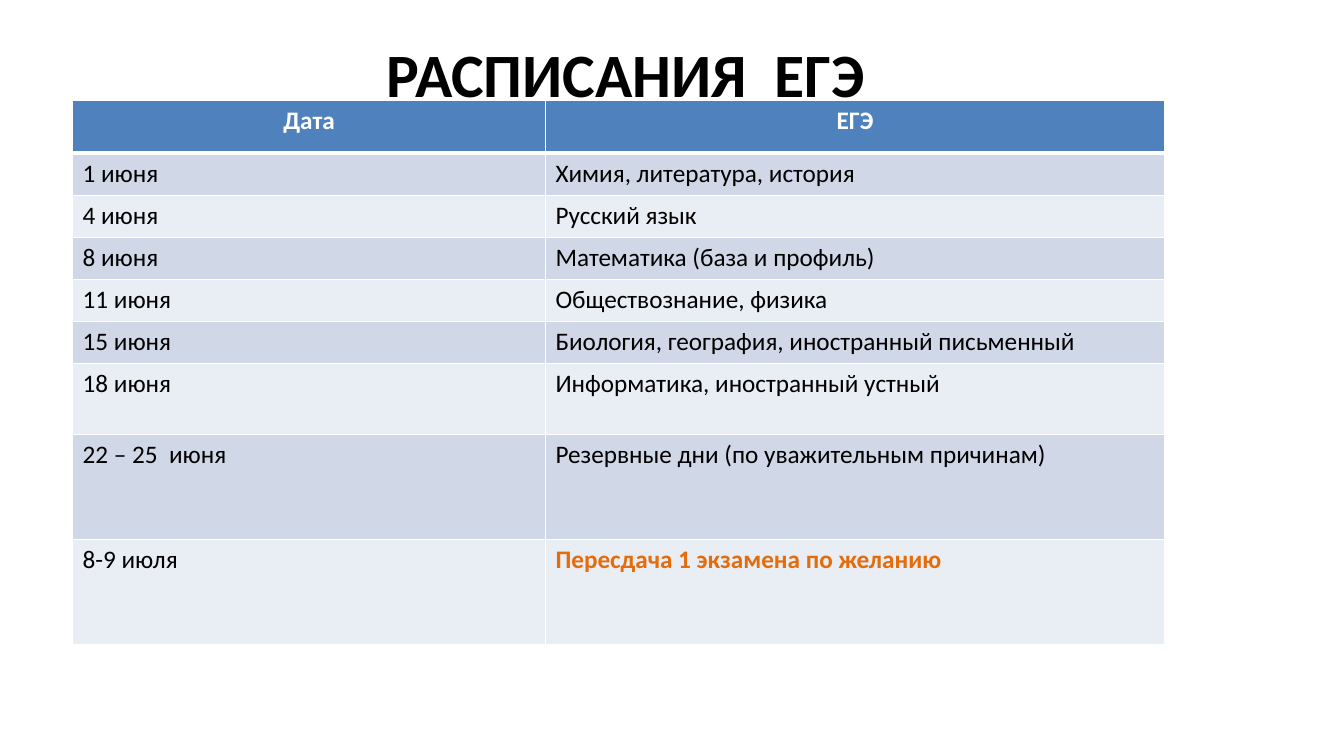
from typing import NamedTuple

from lxml import etree
from pptx import Presentation
from pptx.dml.color import RGBColor
from pptx.enum.text import MSO_ANCHOR, PP_ALIGN
from pptx.oxml.ns import qn
from pptx.util import Inches, Pt

CENTER, LEFT = PP_ALIGN.CENTER, PP_ALIGN.LEFT
MIDDLE = MSO_ANCHOR.MIDDLE
FONT = "Calibri"
BLACK, WHITE, ORANGE = "000000", "FFFFFF", "E46C0A"
HEADER_FILL = "4F81BD"
BAND_FILLS = ("D0D8E8", "E9EDF4")

SLIDE_WIDTH, SLIDE_HEIGHT = 13.33, 7.5
TITLE_BOX = (1.62, 0.25, 9.17, 0.94)
TABLE_LEFT, TABLE_TOP = 0.72, 1.0
COLUMN_WIDTHS = (4.69, 6.14)
HEADER_HEIGHT = 0.52
ROW_HEIGHT = 0.417


class Exam(NamedTuple):
    date: str
    subjects: str
    height: float = ROW_HEIGHT
    highlighted: bool = False


EXAMS = (
    Exam("1 июня", "Химия, литература, история"),
    Exam("4 июня", "Русский язык"),
    Exam("8 июня", "Математика (база и профиль)"),
    Exam("11 июня", "Обществознание, физика"),
    Exam("15 июня", "Биология, география, иностранный письменный"),
    Exam("18 июня", "Информатика, иностранный устный", 0.71),
    Exam("22 – 25  июня", "Резервные дни (по уважительным причинам)", 1.04),
    Exam("8-9 июля", "Пересдача 1 экзамена по желанию", 1.04, True),
)


def rgb(hex_colour: str) -> RGBColor:
    return RGBColor.from_string(hex_colour)


def write(frame, text: str, size: int, colour: str, bold: bool, align) -> None:
    para = frame.paragraphs[0]
    para.text = text
    para.alignment = align
    font = para.font
    font.name, font.size, font.bold = FONT, Pt(size), bold
    font.color.rgb = rgb(colour)


def set_borders(cell, top: int, bottom: int) -> None:
    """Draw white borders; side borders are 1 point wide."""
    properties = cell._tc.get_or_add_tcPr()
    widths = {"a:lnL": 1, "a:lnR": 1, "a:lnT": top, "a:lnB": bottom}
    for position, (tag, width) in enumerate(widths.items()):
        line = etree.Element(qn(tag), w=str(Pt(width)))
        fill = etree.SubElement(line, qn("a:solidFill"))
        etree.SubElement(fill, qn("a:srgbClr"), val=WHITE)
        properties.insert(position, line)


def style_cell(cell, text: str, fill: str, colour: str, bold: bool, align,
               top: int = 1, bottom: int = 1) -> None:
    write(cell.text_frame, text, 18, colour, bold, align)
    cell.fill.solid()
    cell.fill.fore_color.rgb = rgb(fill)
    set_borders(cell, top, bottom)


def add_title(slide) -> None:
    box = slide.shapes.add_textbox(*map(Inches, TITLE_BOX))
    frame = box.text_frame
    frame.word_wrap = True
    frame.vertical_anchor = MIDDLE
    write(frame, "РАСПИСАНИЯ  ЕГЭ", 44, BLACK, True, CENTER)


def add_schedule(slide) -> None:
    heights = [HEADER_HEIGHT] + [exam.height for exam in EXAMS]
    table = slide.shapes.add_table(
        len(heights), len(COLUMN_WIDTHS), Inches(TABLE_LEFT), Inches(TABLE_TOP),
        Inches(sum(COLUMN_WIDTHS)), Inches(sum(heights))).table
    for column, width in zip(table.columns, COLUMN_WIDTHS):
        column.width = Inches(width)
    for row, height in zip(table.rows, heights):
        row.height = Inches(height)

    for column, heading in enumerate(("Дата", "ЕГЭ")):
        style_cell(table.cell(0, column), heading, HEADER_FILL, WHITE, True,
                   CENTER, bottom=3)
    for row, exam in enumerate(EXAMS, start=1):
        fill = BAND_FILLS[(row - 1) % 2]
        top = 3 if row == 1 else 1
        style_cell(table.cell(row, 0), exam.date, fill, BLACK, False, LEFT, top)
        colour = ORANGE if exam.highlighted else BLACK
        style_cell(table.cell(row, 1), exam.subjects, fill, colour,
                   exam.highlighted, LEFT, top)


def main() -> None:
    deck = Presentation()
    deck.slide_width, deck.slide_height = Inches(SLIDE_WIDTH), Inches(SLIDE_HEIGHT)
    slide = deck.slides.add_slide(deck.slide_layouts[6])
    add_title(slide)
    add_schedule(slide)
    deck.save("out.pptx")


if __name__ == "__main__":
    main()
